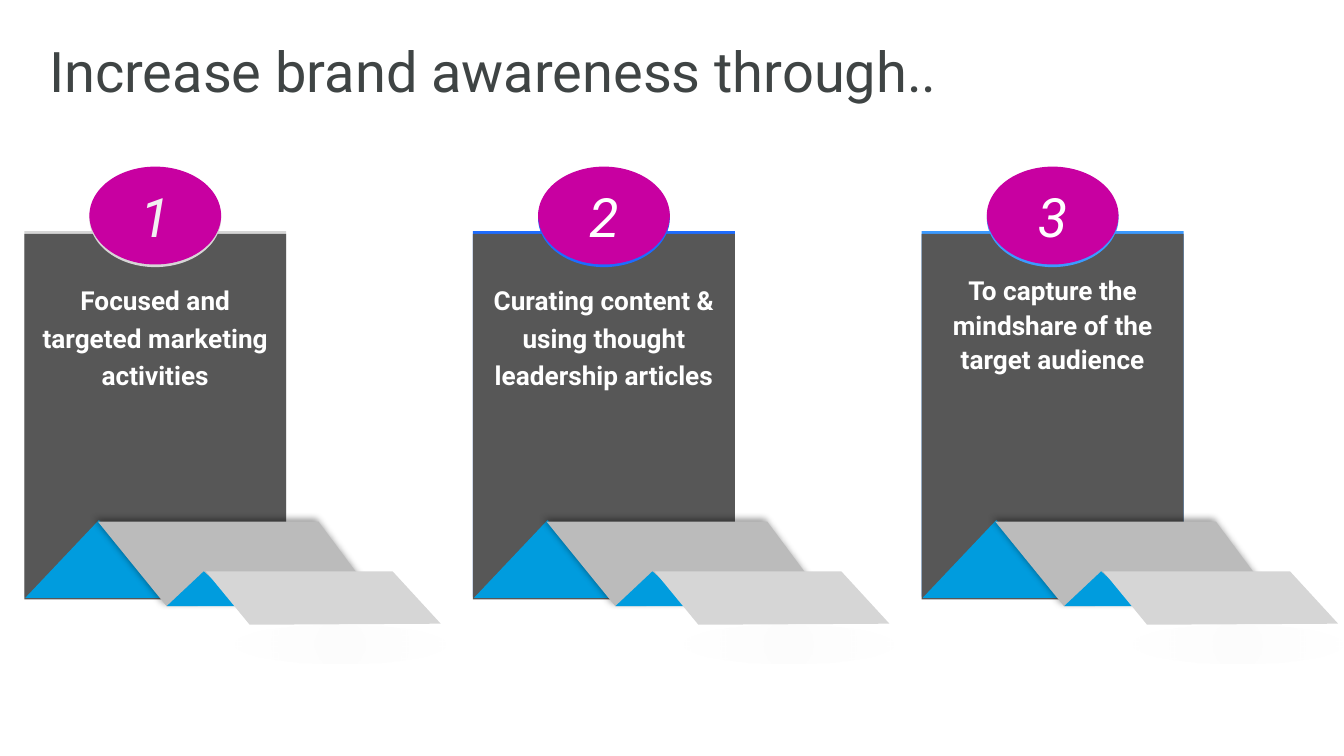
from lxml.etree import SubElement
from pptx import Presentation
from pptx.dml.color import RGBColor
from pptx.enum.shapes import MSO_SHAPE
from pptx.enum.text import MSO_ANCHOR, PP_ALIGN
from pptx.oxml import parse_xml
from pptx.oxml.ns import nsdecls, qn
from pptx.util import Cm, Pt

FONT = "Roboto"
INK = RGBColor(0x3F, 0x44, 0x44)
WHITE = RGBColor(0xFF, 0xFF, 0xFF)
OFF_WHITE = RGBColor(0xF1, 0xF1, 0xF1)
DARK = RGBColor(0x57, 0x57, 0x57)
MAGENTA = RGBColor(0xC8, 0x00, 0xA1)
CYAN = RGBColor(0x00, 0x9C, 0xDE)
GREY = RGBColor(0xBB, 0xBB, 0xBB)
LIGHT = RGBColor(0xD6, 0xD6, 0xD6)
BLUE = RGBColor(0x1E, 0x6C, 0xFF)
SKY = RGBColor(0x3C, 0x9A, 0xFF)

# Content
TITLE = "Increase brand awareness through.."
CARDS = [
    dict(number="1", text="Focused and targeted marketing activities",
         accent=LIGHT, digit=OFF_WHITE, width=4.62, inset=0.13, spacing=1.2),
    dict(number="2", text="Curating content & using thought leadership articles",
         accent=BLUE, digit=WHITE, width=4.47, inset=0.13, spacing=1.2),
    dict(number="3", text="To capture the mindshare of the target audience",
         accent=SKY, digit=WHITE, width=4.5, inset=0, spacing=1.1),
]

# Layout in centimetres; fold points are measured from the card's left edge
LEFT, PITCH, CARD_W, CARD_H = 0.46, 8.48, 4.95, 6.91
BADGE_W, BADGE_H = 2.49, 1.85
BACK_FOLD = [(1.39, 9.86), (5.56, 9.86), (6.73, 11.43), (2.69, 11.46)]
FRONT_FOLD = [(3.43, 10.8), (6.96, 10.8), (7.87, 11.79), (4.26, 11.81)]


def paint(shape, color):
    shape.shadow.inherit = False
    shape.fill.solid()
    shape.fill.fore_color.rgb = color
    shape.line.fill.background()
    return shape


def add_preset(shapes, kind, x, y, w, h, color, adjust=None):
    shape = shapes.add_shape(kind, Cm(x), Cm(y), Cm(w), Cm(h))
    if adjust is not None:
        shape.adjustments[0] = adjust
    return paint(shape, color)


def add_fold(shapes, x, points, color):
    corners = [(Cm(x + dx), Cm(y)) for dx, y in points]
    builder = shapes.build_freeform(*corners[0])
    builder.add_line_segments(corners[1:], close=True)
    return paint(builder.convert_to_shape(), color)


def add_shadow(shape):
    effects = shape._element.spPr.find(qn("a:effectLst"))
    shadow = SubElement(effects, qn("a:outerShdw"), blurRad=str(Pt(4)),
                        dist=str(Pt(2)), dir="13500000", rotWithShape="0")
    color = SubElement(shadow, qn("a:srgbClr"), val="000000")
    SubElement(color, qn("a:alpha"), val="40000")


def fade(shape):
    """Replace the fill by a faint glow that vanishes at the rim."""
    pr = shape._element.spPr
    stops = "".join(
        f'<a:gs pos="{pos}"><a:srgbClr val="D1D1D1"><a:alpha val="{alpha}"/>'
        "</a:srgbClr></a:gs>" for pos, alpha in ((0, 6000), (100000, 0)))
    pr.replace(pr.find(qn("a:solidFill")), parse_xml(
        f'<a:gradFill {nsdecls("a")}><a:gsLst>{stops}</a:gsLst><a:path path="circle">'
        '<a:fillToRect l="50000" t="50000" r="50000" b="50000"/></a:path></a:gradFill>'))


def write(shape, text, size, color, inset=(0.13, 0.13), anchor=MSO_ANCHOR.TOP,
          align=PP_ALIGN.CENTER, spacing=1.0, **style):
    tf = shape.text_frame
    across, down = (Cm(i) for i in inset)
    frame = dict(word_wrap=True, vertical_anchor=anchor, margin_left=across,
                 margin_right=across, margin_top=down, margin_bottom=down)
    for name, value in frame.items():
        setattr(tf, name, value)
    p = tf.paragraphs[0]
    p.alignment, p.line_spacing = align, spacing
    r = p.add_run()
    r.text = text
    for name, value in dict(name=FONT, size=Pt(size), **style).items():
        setattr(r.font, name, value)
    r.font.color.rgb = color


def add_card(s, x, card):
    shapes = s.shapes.add_group_shape().shapes
    inset = (card["inset"], card["inset"])

    # Panel and numbered badge, each over an accent-coloured twin
    for y, color in ((4.37, card["accent"]), (4.42, DARK)):
        add_preset(shapes, MSO_SHAPE.RECTANGLE, x, y, CARD_W, CARD_H, color)
    for y, color in ((3.2, card["accent"]), (3.15, MAGENTA)):
        badge = add_preset(shapes, MSO_SHAPE.OVAL, x + (CARD_W - BADGE_W) / 2, y,
                           BADGE_W, BADGE_H, color)
    write(badge, card["number"], 29, card["digit"], inset, MSO_ANCHOR.MIDDLE,
          italic=True)

    # Message
    box = shapes.add_textbox(Cm(x + (CARD_W - card["width"]) / 2), Cm(5.13),
                             Cm(card["width"]), Cm(3.94))
    write(box, card["text"], 14, WHITE, inset, spacing=card["spacing"], bold=True)

    # Folded ribbon
    add_preset(shapes, MSO_SHAPE.ISOSCELES_TRIANGLE, x + 0.02, 9.83, 2.62, 1.47,
               CYAN, 0.531)
    add_shadow(add_fold(shapes, x, BACK_FOLD, GREY))
    add_preset(shapes, MSO_SHAPE.ISOSCELES_TRIANGLE, x + 2.69, 10.8, 1.42, 0.66,
               CYAN, 0.495)
    add_fold(shapes, x, FRONT_FOLD, LIGHT)
    fade(add_preset(shapes, MSO_SHAPE.OVAL, x + 3.96, 11.81, 4.01, 0.74, LIGHT))


def main():
    prs = Presentation()
    prs.slide_width, prs.slide_height = Cm(25.4), Cm(14.29)
    s = prs.slides.add_slide(prs.slide_layouts[6])
    title = s.shapes.add_textbox(Cm(0.74), Cm(0.56), Cm(17.96), Cm(1.7))
    write(title, TITLE, 30, INK, (0.19, 0.1), MSO_ANCHOR.MIDDLE, PP_ALIGN.LEFT, 0.9)
    for i, card in enumerate(CARDS):
        add_card(s, LEFT + i * PITCH, card)
    prs.save("out.pptx")


if __name__ == "__main__":
    main()
